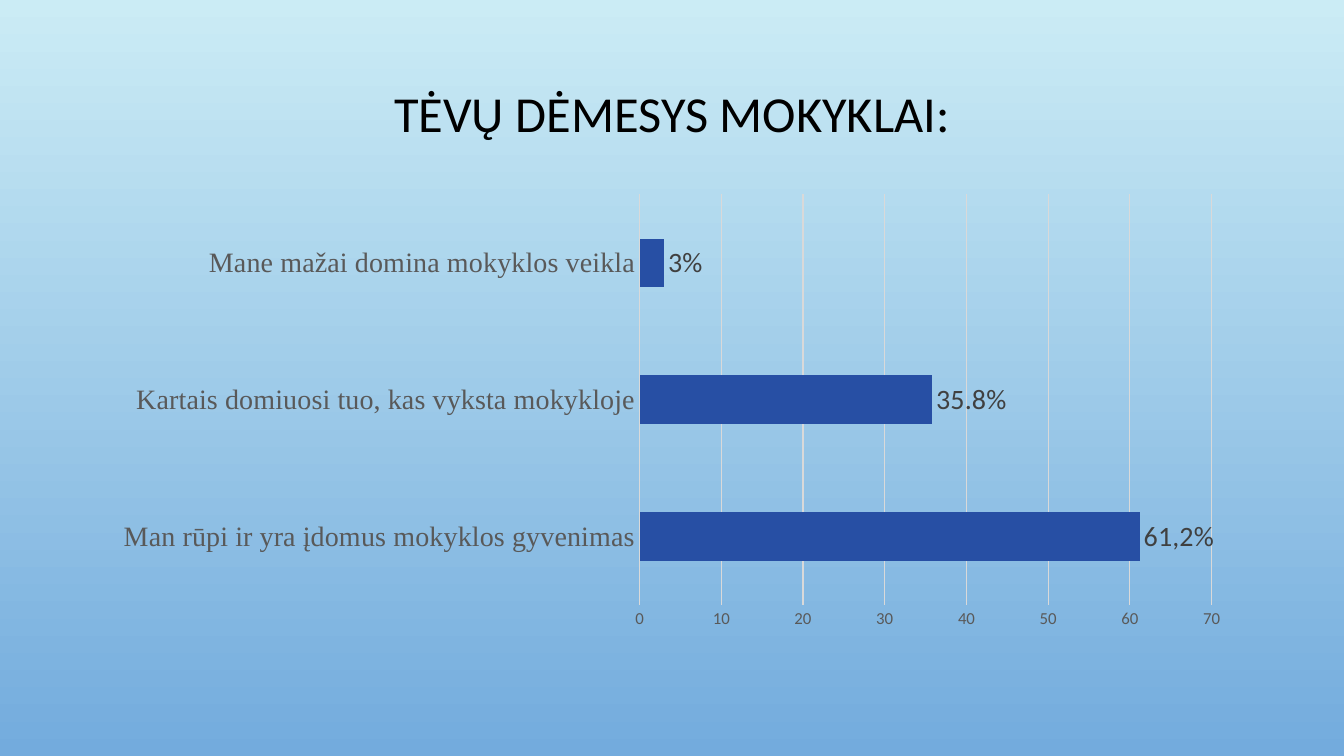
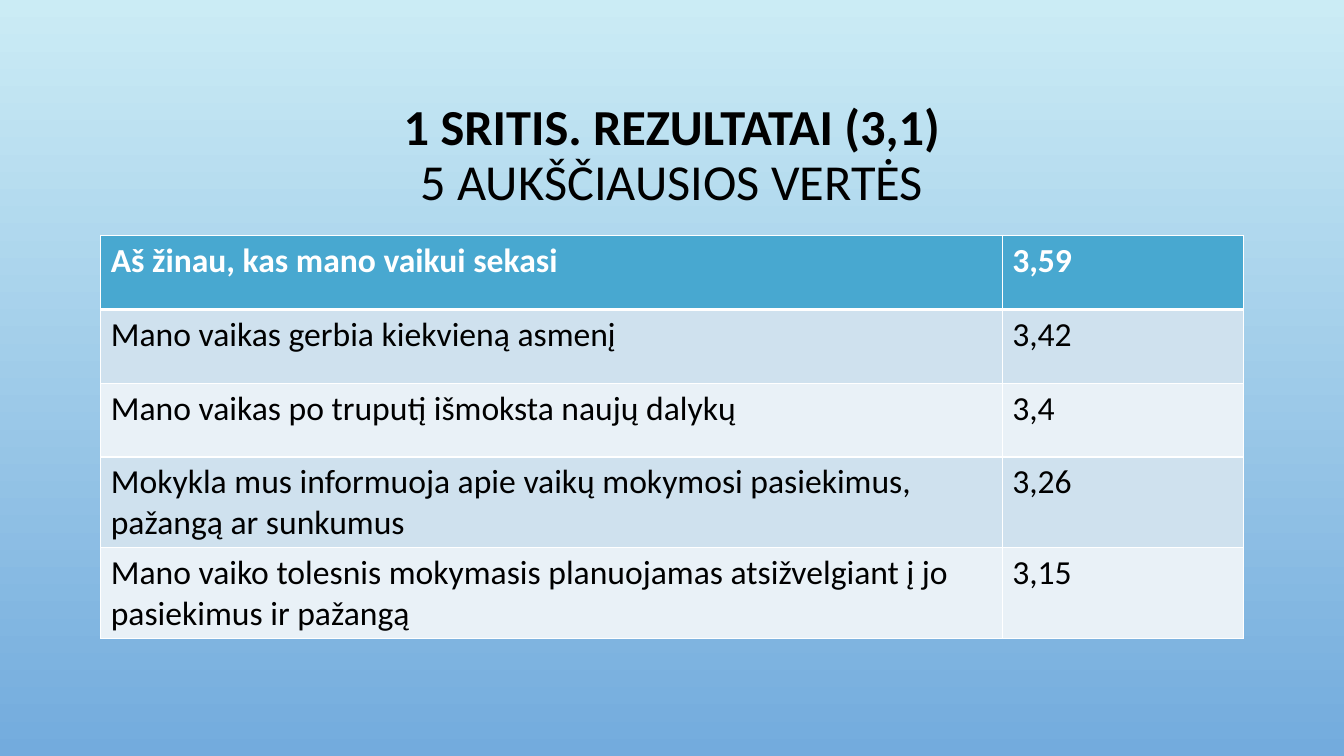
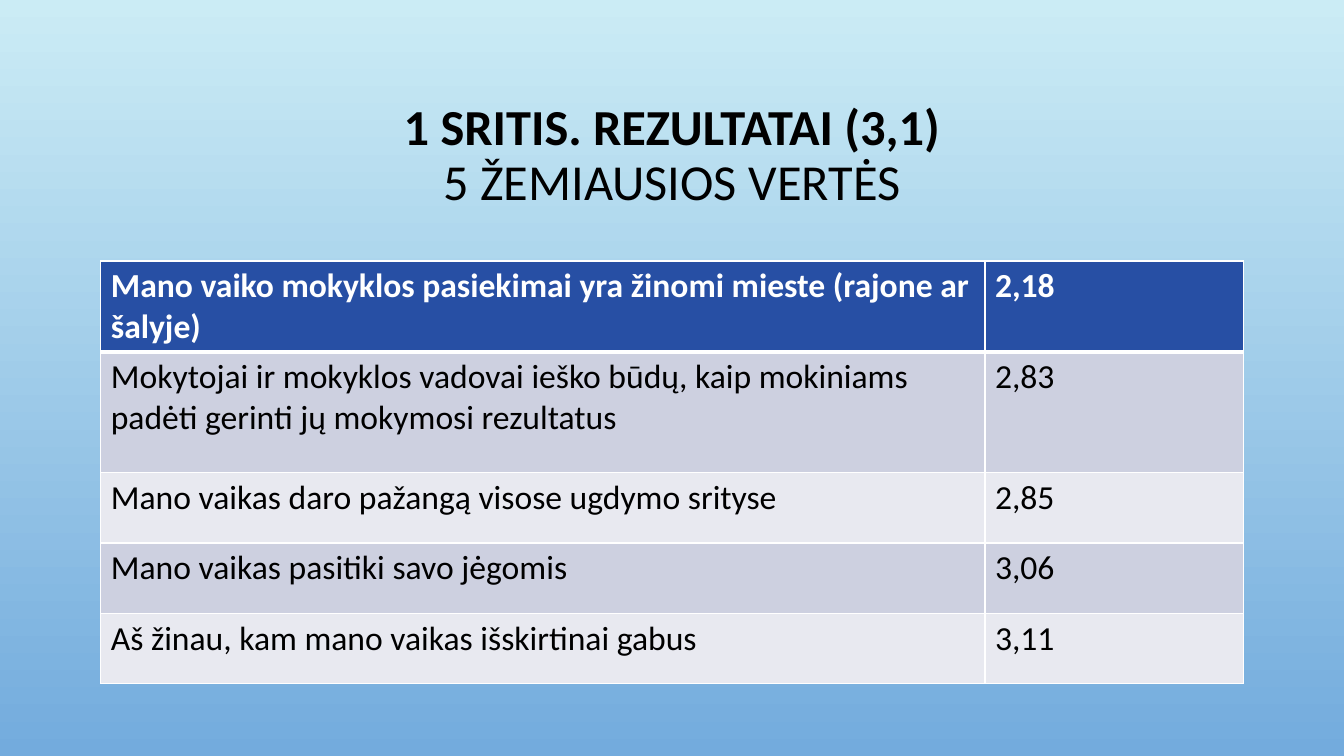
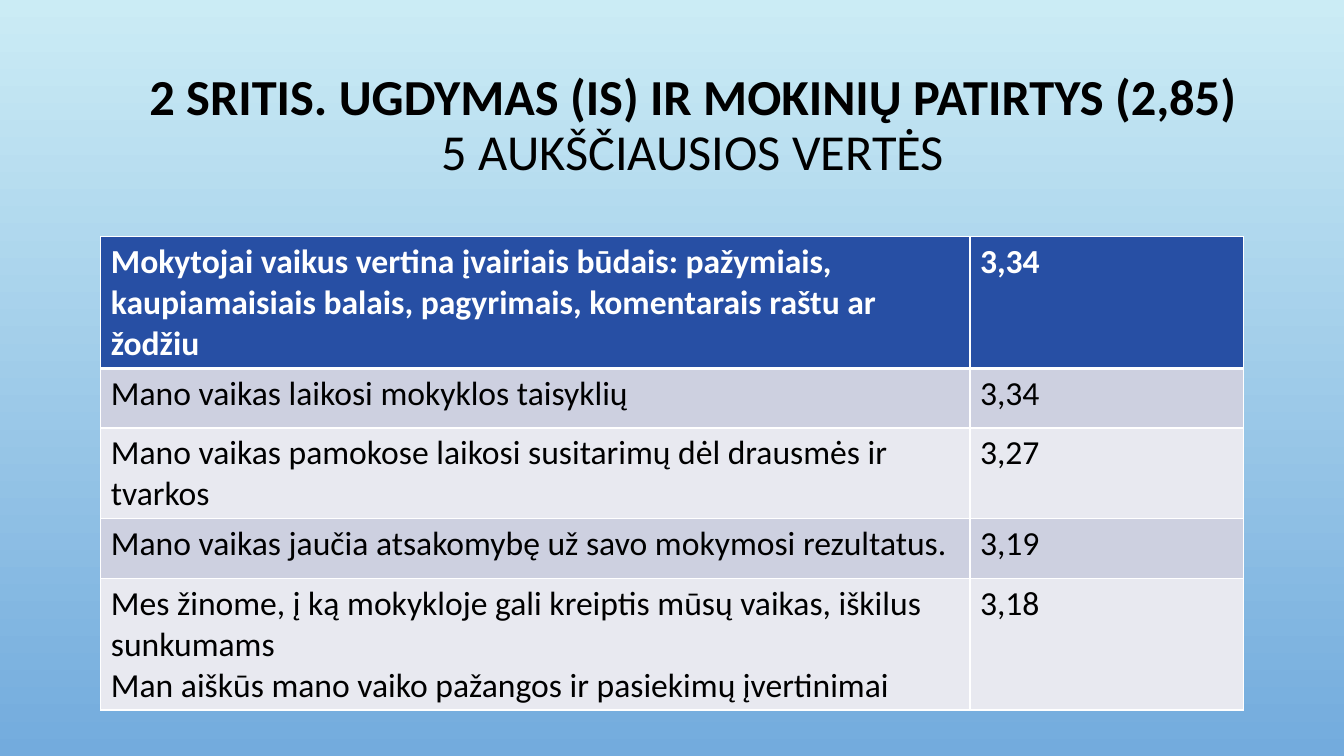
from lxml import etree
from pptx import Presentation
from pptx import util as u
from pptx.chart import data as chart_data
from pptx.dml import color
from pptx.enum import chart as chart_enum
from pptx.enum import text
from pptx.oxml import ns

WIDTH, HEIGHT = u.Inches(13.33), u.Inches(7.5)
LEFT, SPAN = 7.5, 85
TITLE_TOP, TITLE_TALL = 9.07, 23.33
BODY, SERIF = "Calibri", "Times New Roman"
BLACK, WHITE = "000000", "FFFFFF"
SKY_TOP, SKY_BOTTOM = "CBECF5", "73ABDD"
NAVY, AXIS_TEXT, LABEL_TEXT, GRID = "274FA4", "595959", "404040", "D9D9D9"
NAVY_TABLE = (NAVY, "CDD0E0", "E8E9F0")
TEAL_TABLE = ("48A8D0", "CFE1EE", "E9F1F7")


def across(percent):
    return round(WIDTH * percent / 100)


def down(percent):
    return round(HEIGHT * percent / 100)


def rgb(value):
    return color.RGBColor.from_string(value)


def style_font(font, size, shade, face=BODY, bold=False):
    font.size = u.Pt(size)
    font.name = face
    font.bold = bold
    font.color.rgb = rgb(shade)


def add_span(para, words, size, shade, bold=False):
    span = para.add_run()
    span.text = words
    style_font(span.font, size, shade, bold=bold)


def paint_background(master):
    fill = master.background.fill
    fill.gradient()
    fill.gradient_angle = 270
    for stop, shade, place in zip(fill.gradient_stops, (SKY_TOP, SKY_BOTTOM), (0, 1)):
        stop.color.rgb = rgb(shade)
        stop.position = place


def add_title(page, lines, left=LEFT, top=TITLE_TOP, wide=SPAN, tall=TITLE_TALL):
    box = page.shapes.add_textbox(across(left), down(top), across(wide), down(tall))
    frame = box.text_frame
    frame.word_wrap = True
    frame.vertical_anchor = text.MSO_ANCHOR.MIDDLE
    para = frame.paragraphs[0]
    para.alignment = text.PP_ALIGN.CENTER
    para.line_spacing = 0.9
    for index, (words, bold) in enumerate(lines):
        if index:
            para.add_line_break()
        add_span(para, words, 36, BLACK, bold)


def add_area_title(page, area, subject, **place):
    add_title(page, [(area, True), (subject, False)], **place)


def add_border(cell, side, points):
    properties = cell._tc.get_or_add_tcPr()
    line = etree.SubElement(properties, ns.qn("a:ln" + side), w=str(u.Pt(points)))
    fill = etree.SubElement(line, ns.qn("a:solidFill"))
    etree.SubElement(fill, ns.qn("a:srgbClr"), val=WHITE)


def fill_cell(cell, words, row, shades):
    header = row == 0
    for side in "LRTB":
        heavy = (row, side) in ((0, "B"), (1, "T"))
        add_border(cell, side, 3 if heavy else 1)
    cell.fill.solid()
    cell.fill.fore_color.rgb = rgb(shades[0 if header else 2 - row % 2])
    frame = cell.text_frame
    for index, line in enumerate(words.split("\n")):
        para = frame.add_paragraph() if index else frame.paragraphs[0]
        add_span(para, line, 24, WHITE if header else BLACK, header)


def add_ratings(page, top, statement_wide, row_talls, shades, ratings):
    frame = page.shapes.add_table(
        len(ratings), 2, across(LEFT), down(top), across(SPAN), down(sum(row_talls)))
    table = frame.table
    table.horz_banding = False
    for column, wide in zip(table.columns, (statement_wide, SPAN - statement_wide)):
        column.width = across(wide)
    for row, (tall, rating) in enumerate(zip(row_talls, ratings)):
        table.rows[row].height = down(tall)
        for column, words in enumerate(rating):
            fill_cell(table.cell(row, column), words, row, shades)


def add_bar_chart(page, top, tall, answers):
    data = chart_data.CategoryChartData()
    data.categories = [answer for answer, _, _ in answers]
    data.add_series("Series 1", [value for _, value, _ in answers])
    chart = page.shapes.add_chart(
        chart_enum.XL_CHART_TYPE.BAR_CLUSTERED,
        across(LEFT), down(top), across(SPAN), down(tall), data).chart
    chart.has_legend = False
    chart.has_title = False
    style_font(chart.font, 10, BLACK)

    for axis, size, face in ((chart.category_axis, 20, SERIF), (chart.value_axis, 12, BODY)):
        axis.major_tick_mark = chart_enum.XL_TICK_MARK.NONE
        axis.minor_tick_mark = chart_enum.XL_TICK_MARK.NONE
        style_font(axis.tick_labels.font, size, AXIS_TEXT, face)
    chart.category_axis.has_major_gridlines = False
    chart.value_axis.has_major_gridlines = True
    chart.value_axis.format.line.fill.background()
    for line in (chart.category_axis.format.line,
                 chart.value_axis.major_gridlines.format.line):
        line.color.rgb = rgb(GRID)
        line.width = u.Pt(0.75)

    plot = chart.plots[0]
    plot.gap_width = 182
    plot.vary_by_categories = False
    series = plot.series[0]
    series.format.fill.solid()
    series.format.fill.fore_color.rgb = rgb(NAVY)
    labels = series.data_labels
    labels.show_value = True
    labels.position = chart_enum.XL_LABEL_POSITION.OUTSIDE_END
    style_font(labels.font, 20, LABEL_TEXT)
    for index, (_, _, caption) in enumerate(answers):
        label = series.points[index].data_label
        add_span(label.text_frame.paragraphs[0], caption, 20, LABEL_TEXT)
        label.position = chart_enum.XL_LABEL_POSITION.OUTSIDE_END


def main():
    deck = Presentation()
    deck.slide_width, deck.slide_height = WIDTH, HEIGHT
    paint_background(deck.slide_master)
    attention, results_high, results_low, teaching_high = [
        deck.slides.add_slide(deck.slide_layouts[6]) for _ in range(4)]

    add_title(attention, [("TĖVŲ DĖMESYS MOKYKLAI:", False)], tall=12.67)
    add_bar_chart(attention, 24.53, 59.87, [
        ("Man rūpi ir yra įdomus mokyklos gyvenimas", 61.2, "61,2%"),
        ("Kartais domiuosi tuo, kas vyksta mokykloje", 35.8, "35.8%"),
        ("Mane mažai domina mokyklos veikla", 3, "3%"),
    ])

    add_area_title(results_high, "1 SRITIS. REZULTATAI (3,1)", "5 AUKŠČIAUSIOS VERTĖS")
    add_ratings(results_high, 31.2, 67.07, [9.75] * 5, TEAL_TABLE, [
        ("Aš žinau, kas mano vaikui sekasi", "3,59"),
        ("Mano vaikas gerbia kiekvieną asmenį", "3,42"),
        ("Mano vaikas po truputį išmoksta naujų dalykų", "3,4"),
        ("Mokykla mus informuoja apie vaikų mokymosi pasiekimus, pažangą ar sunkumus", "3,26"),
        ("Mano vaiko tolesnis mokymasis planuojamas atsižvelgiant į jo pasiekimus ir pažangą",
         "3,15"),
    ])

    add_area_title(results_low, "1 SRITIS. REZULTATAI (3,1)", "5 ŽEMIAUSIOS VERTĖS")
    add_ratings(results_low, 34.53, 65.79, [9.3, 16, 9.3, 9.3, 9.3], NAVY_TABLE, [
        ("Mano vaiko mokyklos pasiekimai yra žinomi mieste (rajone ar šalyje)", "2,18"),
        ("Mokytojai ir mokyklos vadovai ieško būdų, kaip mokiniams padėti gerinti "
         "jų mokymosi rezultatus", "2,83"),
        ("Mano vaikas daro pažangą visose ugdymo srityse", "2,85"),
        ("Mano vaikas pasitiki savo jėgomis", "3,06"),
        ("Aš žinau, kam mano vaikas išskirtinai gabus", "3,11"),
    ])

    add_area_title(teaching_high, "2 SRITIS. UGDYMAS (IS) IR MOKINIŲ PATIRTYS (2,85)",
                   "5 AUKŠČIAUSIOS VERTĖS", top=5.07, wide=88.15)
    add_ratings(teaching_high, 31.33, 64.67, [17.4, 7.9, 12, 7.9, 17.4], NAVY_TABLE, [
        ("Mokytojai vaikus vertina įvairiais būdais: pažymiais, kaupiamaisiais balais, "
         "pagyrimais, komentarais raštu ar žodžiu", "3,34"),
        ("Mano vaikas laikosi mokyklos taisyklių", "3,34"),
        ("Mano vaikas pamokose laikosi susitarimų dėl drausmės ir tvarkos", "3,27"),
        ("Mano vaikas jaučia atsakomybę už savo mokymosi rezultatus.", "3,19"),
        ("Mes žinome, į ką mokykloje gali kreiptis mūsų vaikas, iškilus sunkumams\n"
         "Man aiškūs mano vaiko pažangos ir pasiekimų įvertinimai", "3,18"),
    ])
    deck.save("out.pptx")


if __name__ == "__main__":
    main()
